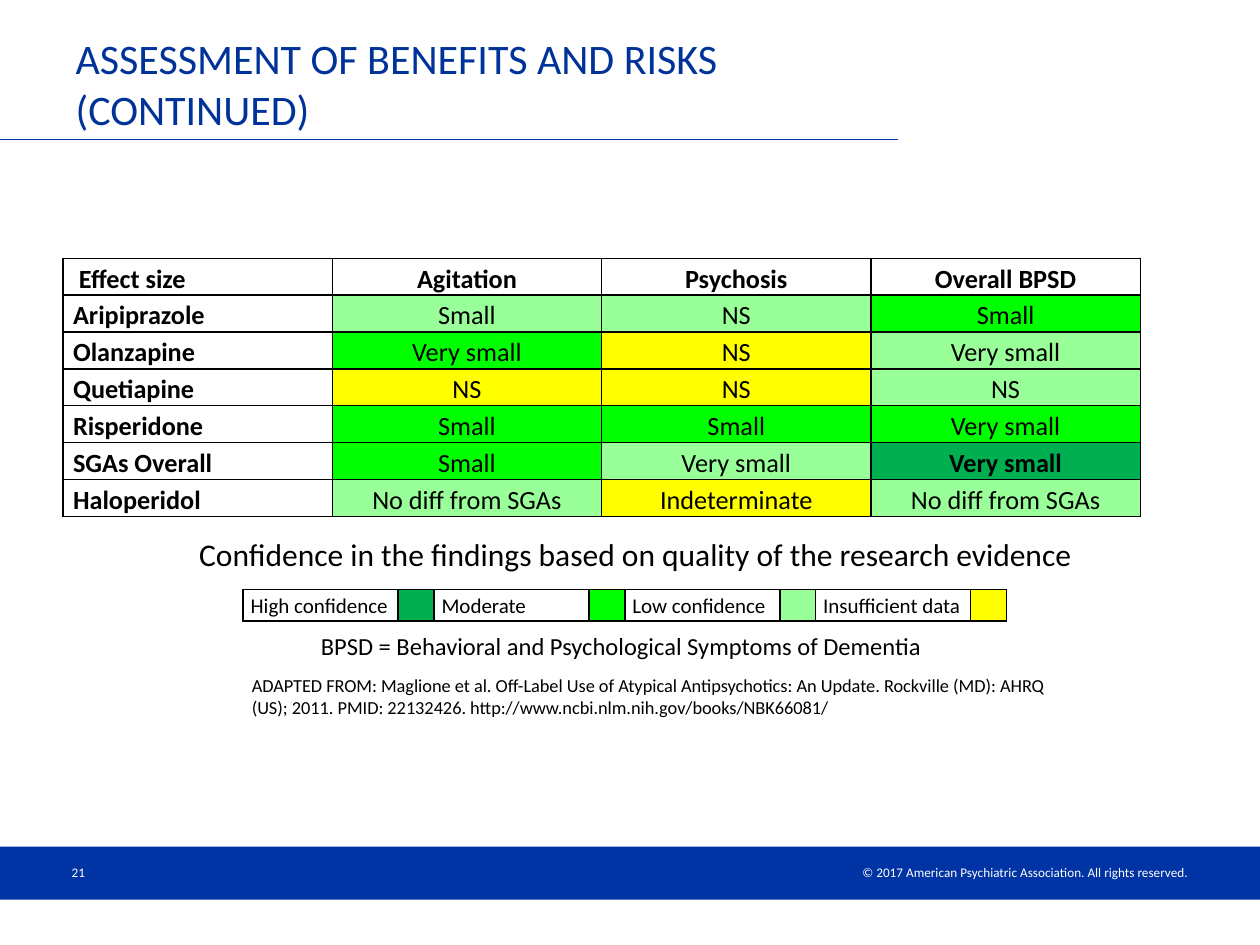
"""Build the slide on benefits and risks of antipsychotics in dementia."""
import pptx
import pptx.util
import pptx.dml.color
import pptx.enum.shapes
import pptx.enum.text
import pptx.oxml
import pptx.oxml.ns

Inches, Pt = pptx.util.Inches, pptx.util.Pt
RGBColor = pptx.dml.color.RGBColor
ALIGN = pptx.enum.text.PP_ALIGN
MIDDLE = pptx.enum.text.MSO_ANCHOR.MIDDLE

FONT = "Calibri"
BLACK = RGBColor(0x00, 0x00, 0x00)
WHITE = RGBColor(0xFF, 0xFF, 0xFF)
BAND_BLUE = RGBColor(0x00, 0x33, 0xA3)
TITLE_BLUE = RGBColor(0x00, 0x33, 0x99)
HIGH = RGBColor(0x00, 0xB0, 0x50)
MODERATE = RGBColor(0x00, 0xFF, 0x00)
LOW = RGBColor(0x99, 0xFF, 0x99)
INSUFFICIENT = RGBColor(0xFF, 0xFF, 0x00)

HEADINGS = [" Effect size", "Agitation", "Psychosis", "Overall BPSD"]
EFFECTS = [
    ("Aripiprazole", ("Small", LOW), ("NS", LOW), ("Small", MODERATE)),
    ("Olanzapine", ("Very small", MODERATE), ("NS", INSUFFICIENT), ("Very small", LOW)),
    ("Quetiapine", ("NS", INSUFFICIENT), ("NS", INSUFFICIENT), ("NS", LOW)),
    ("Risperidone", ("Small", MODERATE), ("Small", MODERATE), ("Very small", MODERATE)),
    ("SGAs Overall", ("Small", MODERATE), ("Very small", LOW), ("Very small", HIGH)),
    ("Haloperidol", ("No diff from SGAs", LOW), ("Indeterminate", INSUFFICIENT),
     ("No diff from SGAs", LOW)),
]
LEGEND = [("High confidence", HIGH), ("Moderate", MODERATE),
          ("Low confidence", LOW), ("Insufficient data", INSUFFICIENT)]


def format_text(text_frame, text, size, color=BLACK, align=ALIGN.LEFT, bold=False):
    """Set the text of a frame and format its runs."""
    text_frame.text = text
    paragraph = text_frame.paragraphs[0]
    paragraph.alignment = align
    for run in paragraph.runs:
        run.font.name = FONT
        run.font.size = Pt(size)
        run.font.bold = bold
        run.font.color.rgb = color
    return paragraph


def add_text(slide, box, text, size, color=BLACK, align=ALIGN.LEFT, anchor=None):
    """Add a wrapped text box."""
    shape = slide.shapes.add_textbox(*map(Inches, box))
    shape.text_frame.word_wrap = True
    shape.text_frame.vertical_anchor = anchor
    format_text(shape.text_frame, text, size, color, align)


def set_title(slide, text):
    """Place and format the title placeholder."""
    title = slide.shapes.title
    title.left, title.top, title.width, title.height = map(Inches, (0.5, 0.34, 6.63, 0.64))
    title.text_frame.auto_size = pptx.enum.text.MSO_AUTO_SIZE.NONE
    title.text_frame.vertical_anchor = MIDDLE
    format_text(title.text_frame, text, 24, TITLE_BLUE)


def add_footer_band(slide):
    """Add the blue band behind the footer."""
    band = slide.shapes.add_shape(pptx.enum.shapes.MSO_SHAPE.RECTANGLE,
                                  *map(Inches, (0, 6.72, 10, 0.42)))
    band.shadow.inherit = False
    band.fill.solid()
    band.fill.fore_color.rgb = BAND_BLUE
    band.line.fill.background()


def add_title_rule(slide):
    """Add the line under the title."""
    rule = slide.shapes.add_connector(pptx.enum.shapes.MSO_CONNECTOR.STRAIGHT,
                                      *map(Inches, (0, 1.11, 7.13, 1.11)))
    rule.line.color.rgb = TITLE_BLUE
    rule.line.width = Pt(0.75)
    properties = rule._element.spPr
    properties.append(properties.makeelement(pptx.oxml.ns.qn("a:effectLst"), {}))


def set_borders(cell):
    """Draw a black border on each side of a cell."""
    properties = cell._tc.get_or_add_tcPr()
    for index, side in enumerate(("lnL", "lnR", "lnT", "lnB")):
        properties.insert(index, pptx.oxml.parse_xml(
            f'<a:{side} {pptx.oxml.ns.nsdecls("a")} w="{Pt(1)}"><a:solidFill>'
            f'<a:srgbClr val="{BLACK}"/></a:solidFill></a:{side}>'))


def fill_cell(cell, text, size, margin, fill=None, align=ALIGN.LEFT, bold=False):
    """Set the text, margins, fill and borders of a cell."""
    cell.margin_left = cell.margin_right = Inches(margin)
    cell.margin_top = cell.margin_bottom = 0
    paragraph = format_text(cell.text_frame, text, size, align=align, bold=bold)
    paragraph.line_spacing = 1.15
    if not text:
        end = paragraph._p.makeelement(pptx.oxml.ns.qn("a:endParaRPr"),
                                       {"sz": str(int(size * 100))})
        paragraph._p.append(end)
    if fill is None:
        cell.fill.background()
    else:
        cell.fill.solid()
        cell.fill.fore_color.rgb = fill
    set_borders(cell)


def add_grid(slide, left, top, widths, row_height, row_count):
    """Add an unstyled table with the given columns and equal rows."""
    table = slide.shapes.add_table(row_count, len(widths), Inches(left), Inches(top),
                                   Inches(sum(widths)), Inches(row_height * row_count)).table
    table.first_row = table.horz_banding = False
    for column, width in zip(table.columns, widths):
        column.width = Inches(width)
    return table


def add_effect_table(slide):
    """Add the table of effect sizes by drug and outcome."""
    rows = [[(heading, None) for heading in HEADINGS]]
    rows += [[(drug, None), *effects] for drug, *effects in EFFECTS]
    table = add_grid(slide, 0.5, 2.05, [8.55 / 4] * 4, 2.05 / 7, len(rows))
    for row_index, row in enumerate(rows):
        for column_index, (text, fill) in enumerate(row):
            fill_cell(table.cell(row_index, column_index), text, 15, 0.08, fill,
                      ALIGN.CENTER if column_index else ALIGN.LEFT,
                      bold=fill in (None, HIGH))


def add_legend(slide):
    """Add the colour key for confidence levels."""
    table = add_grid(slide, 1.93, 4.68, [1.23, 0.285] * len(LEGEND), 0.25, 1)
    for index, (label, color) in enumerate(LEGEND):
        fill_cell(table.cell(0, 2 * index), label, 12, 0.06)
        fill_cell(table.cell(0, 2 * index + 1), "", 12, 0.06, color)


def main():
    """Build and save the presentation."""
    presentation = pptx.Presentation()
    presentation.slide_width, presentation.slide_height = Inches(10), Inches(7.5)
    slide = presentation.slides.add_slide(presentation.slide_layouts[5])
    add_footer_band(slide)
    add_title_rule(slide)
    add_text(slide, (5.18, 6.81, 4.37, 0.23),
             "© 2017 American Psychiatric Association. All rights reserved. ",
             7.5, WHITE, ALIGN.RIGHT, MIDDLE)
    add_text(slide, (0.47, 6.72, 2.33, 0.4), "21", 7.5, WHITE, anchor=MIDDLE)
    set_title(slide, "ASSESSMENT OF BENEFITS AND RISKS (CONTINUED)")
    add_effect_table(slide)
    add_legend(slide)
    add_text(slide, (1.4, 4.2, 7.29, 0.4),
             "Confidence in the findings based on quality of the research evidence",
             18, align=ALIGN.CENTER)
    add_text(slide, (1.9, 4.96, 6.06, 0.34),
             "BPSD = Behavioral and Psychological Symptoms of Dementia",
             14, align=ALIGN.CENTER)
    add_text(slide, (1.9, 5.3, 6.66, 0.45),
             "ADAPTED FROM: Maglione et al. Off-Label Use of Atypical Antipsychotics: "
             "An Update. Rockville (MD): AHRQ (US); 2011. PMID: 22132426. "
             "http://www.ncbi.nlm.nih.gov/books/NBK66081/", 10.5)
    presentation.save("out.pptx")


if __name__ == "__main__":
    main()
